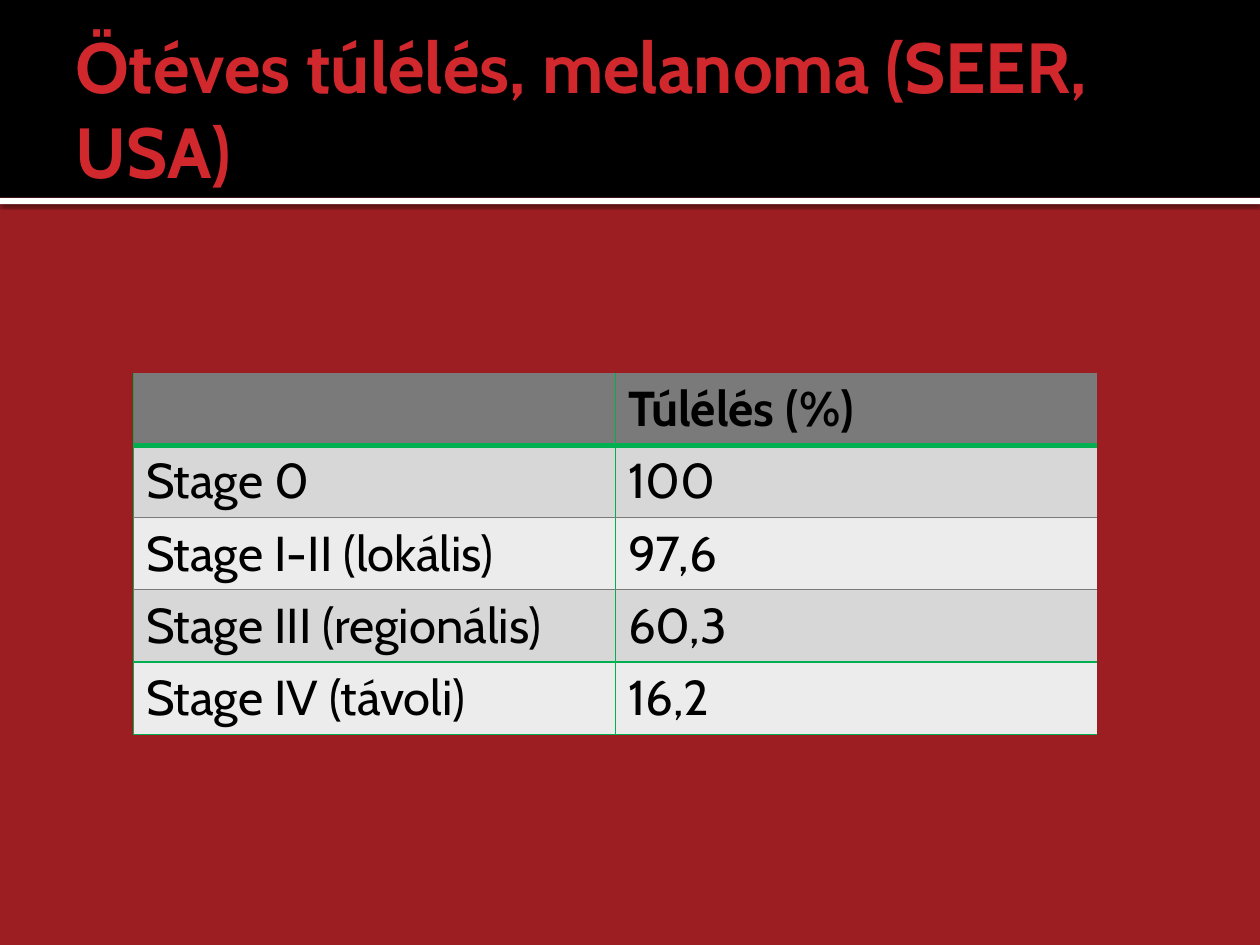
import pptx
import pptx.dml.color
import pptx.enum.shapes
import pptx.enum.text
import pptx.oxml
import pptx.util
from pptx.oxml.ns import nsdecls

WIDTH, HEIGHT = 10, 7.5
GREEN, GREY = "00B050", "7A7A7A"
SURVIVAL = [
    ("", "Túlélés (%)"),
    ("Stage 0", "100"),
    ("Stage I-II (lokális)", "97,6"),
    ("Stage III (regionális)", "60,3"),
    ("Stage IV (távoli)", "16,2"),
]


def color(value):
    return pptx.dml.color.RGBColor.from_string(value)


def border_xml(side, line):
    if line is None:
        return f'<a:{side} {nsdecls("a")} w="0"><a:noFill/></a:{side}>'
    value, points = line
    return (f'<a:{side} {nsdecls("a")} w="{pptx.util.Pt(points)}"><a:solidFill>'
            f'<a:srgbClr val="{value}"/></a:solidFill></a:{side}>')


class Deck:
    font = "Cabin"

    def __init__(self, background):
        self.presentation = pptx.Presentation()
        self.presentation.slide_width = pptx.util.Inches(WIDTH)
        self.presentation.slide_height = pptx.util.Inches(HEIGHT)
        self.slide = self.presentation.slides.add_slide(self.presentation.slide_layouts[6])
        fill = self.slide.background.fill
        fill.solid()
        fill.fore_color.rgb = color(background)

    def place(self, left, top, width, height):
        shares = (left * WIDTH, top * HEIGHT, width * WIDTH, height * HEIGHT)
        return [pptx.util.Inches(round(length, 2)) for length in shares]

    def style(self, frame, size, value, bold):
        for run in frame.paragraphs[0].runs:
            run.font.name = self.font
            run.font.size = pptx.util.Pt(size)
            run.font.bold = bold
            run.font.color.rgb = color(value)

    def band(self, top, height, value, shadow=False):
        band = self.slide.shapes.add_shape(
            pptx.enum.shapes.MSO_SHAPE.RECTANGLE, *self.place(0, top, 1, height))
        band.shadow.inherit = False
        band.fill.solid()
        band.fill.fore_color.rgb = color(value)
        band.line.fill.background()
        if shadow:
            effects = band._element.spPr.find(pptx.oxml.ns.qn("a:effectLst"))
            effects.append(pptx.oxml.parse_xml(
                f'<a:outerShdw {nsdecls("a")} blurRad="{pptx.util.Pt(2.5)}" '
                f'dist="{pptx.util.Pt(0.8)}" dir="5400000"><a:srgbClr val="000000">'
                '<a:alpha val="60000"/></a:srgbClr></a:outerShdw>'))

    def title(self, words, place, size, value):
        frame = self.slide.shapes.add_textbox(*self.place(*place)).text_frame
        frame.word_wrap = True
        frame.vertical_anchor = pptx.enum.text.MSO_ANCHOR.MIDDLE
        frame.margin_right = pptx.util.Inches(0.05)
        frame.text = words
        self.style(frame, size, value, True)

    def table(self, rows, place, size, fills, rules):
        table = self.slide.shapes.add_table(
            len(rows), len(rows[0]), *self.place(*place)).table
        for r, row in enumerate(rows):
            for c, words in enumerate(row):
                cell = table.cell(r, c)
                cell.text = words
                self.style(cell.text_frame, size, "000000", r == 0)
                if not words:
                    cell.text_frame.paragraphs[0].font.size = pptx.util.Pt(size)
                cell.fill.solid()
                cell.fill.fore_color.rgb = color(fills[r])
                last = c == len(row) - 1
                sides = {
                    "lnL": (GREEN, 1),
                    "lnR": None if last else (GREEN, 1),
                    "lnT": rules[r],
                    "lnB": rules[r + 1],
                }
                properties = cell._tc.get_or_add_tcPr()
                for index, (side, line) in enumerate(sides.items()):
                    properties.insert(index, pptx.oxml.parse_xml(border_xml(side, line)))


def main():
    deck = Deck("9D1E22")
    header = 1.57 / HEIGHT
    deck.band(header, 0.05 / HEIGHT, "FFFFFF", shadow=True)
    deck.band(0, header, "000000")
    deck.title("Ötéves túlélés, melanoma (SEER, USA)",
               (0.05, 0.17 / HEIGHT, 0.9, 1.37 / HEIGHT), 40.5, "D1282E")
    thin, green = (GREY, 0.5), (GREEN, 1)
    deck.table(SURVIVAL, (0.106, 2.96 / HEIGHT, 0.765, 2.87 / HEIGHT), 28,
               [GREY] + ["D7D7D7", "ECECEC"] * 2,
               [None, (GREEN, 3), thin, thin, green, green])
    deck.presentation.save("out.pptx")


if __name__ == "__main__":
    main()
